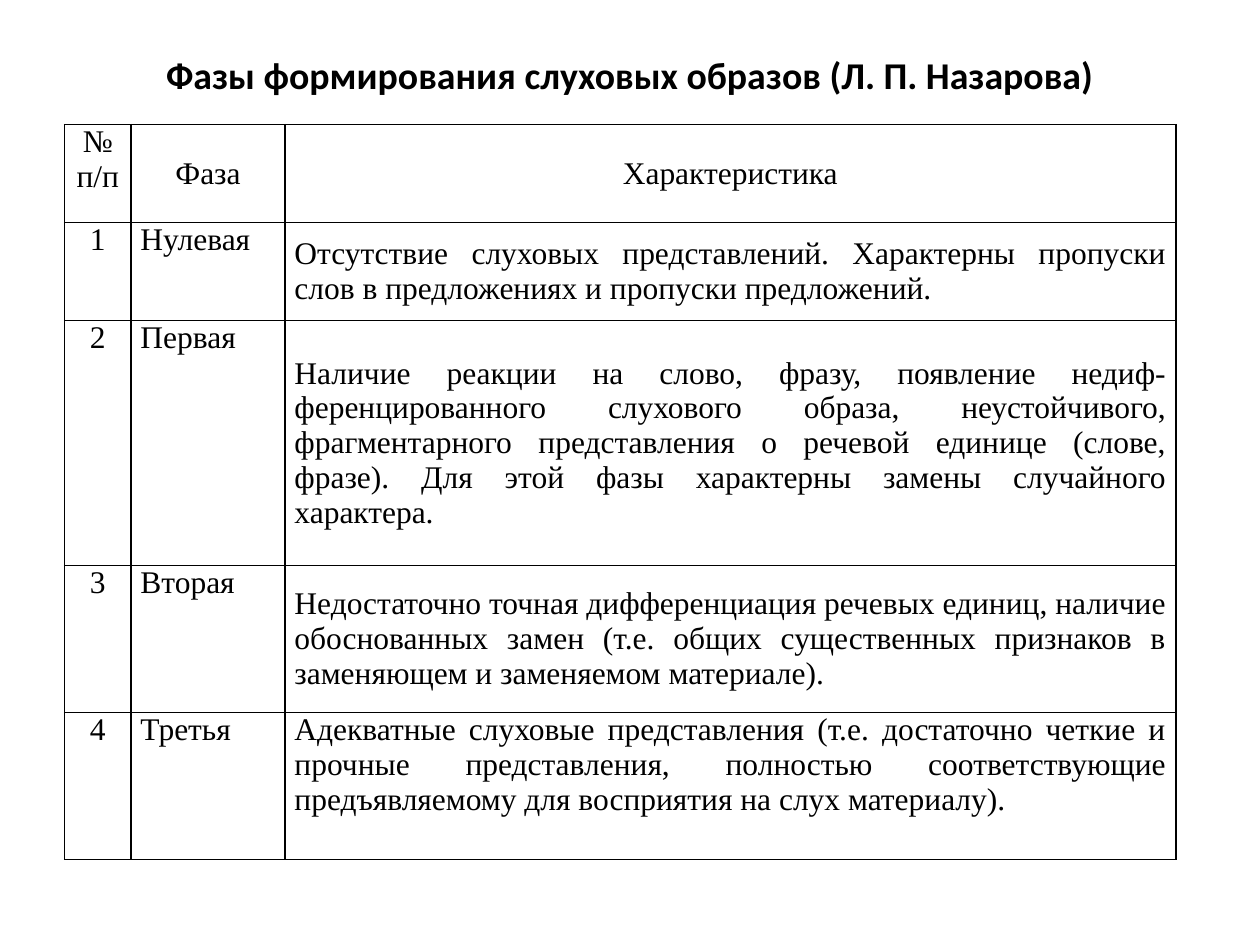
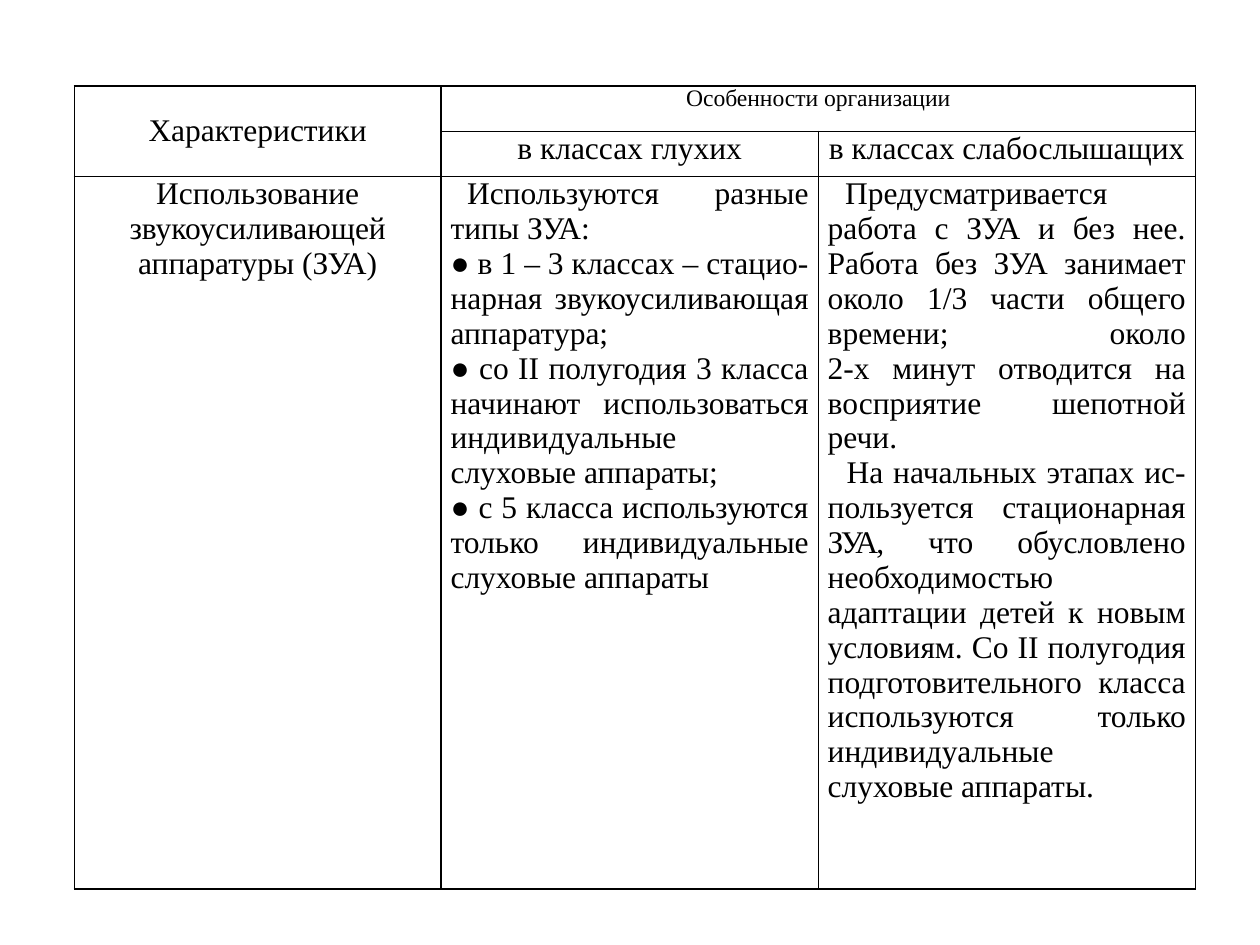
from lxml import etree
from pptx import Presentation
from pptx import util as u
from pptx.dml import color
from pptx.enum import text
from pptx.oxml import ns

COLORS = {"ink": "000000", "paper": "FFFFFF"}
CENTER, JUSTIFY = text.PP_ALIGN.CENTER, text.PP_ALIGN.JUSTIFY
TOP, MIDDLE = text.MSO_ANCHOR.TOP, text.MSO_ANCHOR.MIDDLE


def rgb(name):
    return color.RGBColor.from_string(COLORS[name])


def set_format(target, values):
    for name, value in values.items():
        setattr(target, name, value)


class Deck:
    title_font = {"name": "Calibri", "size": u.Pt(21.6), "bold": True}
    body_font = {"name": "Times New Roman", "size": u.Pt(18)}
    cell_format = {"margin_left": u.Pt(5.4), "margin_right": u.Pt(5.4),
                   "margin_top": 0, "margin_bottom": 0}

    def __init__(self):
        self.prs = Presentation()
        set_format(self.prs, {"slide_width": u.Pt(720), "slide_height": u.Pt(540)})
        self.slide = None

    def new_slide(self):
        self.slide = self.prs.slides.add_slide(self.prs.slide_layouts[6])
        fill = self.slide.background.fill
        fill.solid()
        fill.fore_color.rgb = rgb("paper")

    def style_run(self, run, font):
        set_format(run.font, font)
        run.font.color.rgb = rgb("ink")

    def title(self, wording):
        box = self.slide.shapes.add_textbox(u.Pt(36), u.Pt(27), u.Pt(648), u.Pt(31))
        frame = box.text_frame
        set_format(frame, {"word_wrap": True, "vertical_anchor": MIDDLE})
        heading = frame.paragraphs[0]
        set_format(heading, {"text": wording, "alignment": CENTER})
        self.style_run(heading.runs[0], self.title_font)

    def table(self, left, top, widths, heights):
        frame = self.slide.shapes.add_table(
            len(heights), len(widths), u.Pt(left), u.Pt(top),
            u.Pt(sum(widths)), u.Pt(sum(heights)))
        grid = frame.table
        set_format(grid, {"first_row": False, "horz_banding": False})
        for column, width in zip(grid.columns, widths):
            column.width = u.Pt(width)
        for row, height in zip(grid.rows, heights):
            row.height = u.Pt(height)
            for cell in row.cells:
                self.borders(cell)
                cell.fill.background()
                set_format(cell, self.cell_format)
        return grid

    def borders(self, cell):
        properties = cell._tc.get_or_add_tcPr()
        for side in ("a:lnL", "a:lnR", "a:lnT", "a:lnB"):
            line = etree.SubElement(properties, ns.qn(side), w=str(u.Pt(1)))
            fill = etree.SubElement(line, ns.qn("a:solidFill"))
            etree.SubElement(fill, ns.qn("a:srgbClr"), val=COLORS["ink"])

    def cell_text(self, cell, *wordings, align=CENTER, anchor=TOP, size=18, indents=()):
        cell.vertical_anchor = anchor
        frame = cell.text_frame
        for index, wording in enumerate(wordings):
            paragraph = frame.paragraphs[0] if index == 0 else frame.add_paragraph()
            paragraph.alignment = align
            if index < len(indents):
                paragraph._p.get_or_add_pPr().set("indent", str(u.Pt(indents[index])))
            for line_number, line in enumerate(wording.split("\n")):
                if line_number:
                    paragraph.add_line_break()
                for piece_number, piece in enumerate(line.split("|")):
                    run = paragraph.add_run()
                    run.text = piece
                    self.style_run(run, {**self.body_font, "size": u.Pt(size)})
                    if piece_number % 2:
                        run._r.get_or_add_rPr().set("spc", "-100")


PHASES = [
    ("Нулевая", "Отсутствие слуховых представлений. Характерны пропуски слов "
     "в предложениях и пропуски предложений.", MIDDLE),
    ("Первая", "Наличие реакции на слово, фразу, появление недиф-ференцированного "
     "слухового образа, неустойчивого, фрагментарного представления о речевой единице "
     "(слове, фразе). Для этой фазы характерны замены случайного характера.", MIDDLE),
    ("Вторая", "Недостаточно точная дифференциация речевых единиц, наличие обоснованных "
     "замен (т.е. общих существенных признаков в заменяющем и заменяемом материале).",
     MIDDLE),
    ("Третья", "Адекватные слуховые представления (т.е. достаточно четкие и прочные "
     "представления, полностью соответствующие предъявляемому для восприятия на слух "
     "материалу).", TOP),
]

DEAF_CLASSES = [
    "Используются разные типы ЗУА:",
    "● в 1 – 3 классах – стацио-нарная звукоусиливающая аппаратура;",
    "● со II полугодия 3 класса начинают использоваться индивидуальные "
    "слуховые аппараты;",
    "● с 5 класса используются только индивидуальные слуховые аппараты",
]

HARD_OF_HEARING_CLASSES = [
    "Предусматривается работа с ЗУА и без нее. Работа без ЗУА занимает около 1/3 части "
    "общего времени; около\n2-х минут отводится на восприятие шепотной речи.",
    "На начальных этапах ис-пользуется стационарная |ЗУА,| что обусловлено "
    "необходимостью адаптации детей к новым условиям. Со II полугодия подготовительного "
    "класса используются только индивидуальные слуховые аппараты.",
]


def phases_slide(deck):
    deck.new_slide()
    deck.title("Фазы формирования слуховых образов (Л. П. Назарова)")
    phases = deck.table(36.9, 71.2, [38, 88, 509], [56, 56, 140, 84, 84])
    deck.cell_text(phases.cell(0, 0), "№ п/п")
    deck.cell_text(phases.cell(0, 1), "Фаза", anchor=MIDDLE)
    deck.cell_text(phases.cell(0, 2), "Характеристика", anchor=MIDDLE)
    for number, (phase, description, anchor) in enumerate(PHASES, 1):
        deck.cell_text(phases.cell(number, 0), str(number))
        deck.cell_text(phases.cell(number, 1), phase, align=JUSTIFY)
        deck.cell_text(phases.cell(number, 2), description, align=JUSTIFY, anchor=anchor)


def organisation_slide(deck):
    deck.new_slide()
    features = deck.table(42.5, 49, [209.6, 215.5, 215.5], [26, 26, 407])
    features.cell(0, 0).merge(features.cell(1, 0))
    features.cell(0, 1).merge(features.cell(0, 2))
    deck.cell_text(features.cell(0, 0), "Характеристики", anchor=MIDDLE)
    deck.cell_text(features.cell(0, 1), "Особенности организации", size=13.5)
    deck.cell_text(features.cell(1, 1), "в классах глухих")
    deck.cell_text(features.cell(1, 2), "в классах слабослышащих")
    deck.cell_text(features.cell(2, 0), "Использование звукоусиливающей аппаратуры (ЗУА)")
    deck.cell_text(features.cell(2, 1), *DEAF_CLASSES, align=JUSTIFY, indents=[9.4])
    deck.cell_text(features.cell(2, 2), *HARD_OF_HEARING_CLASSES, align=JUSTIFY,
                   indents=[10, 10.8])


def main():
    deck = Deck()
    phases_slide(deck)
    organisation_slide(deck)
    deck.prs.save("out.pptx")


if __name__ == "__main__":
    main()
